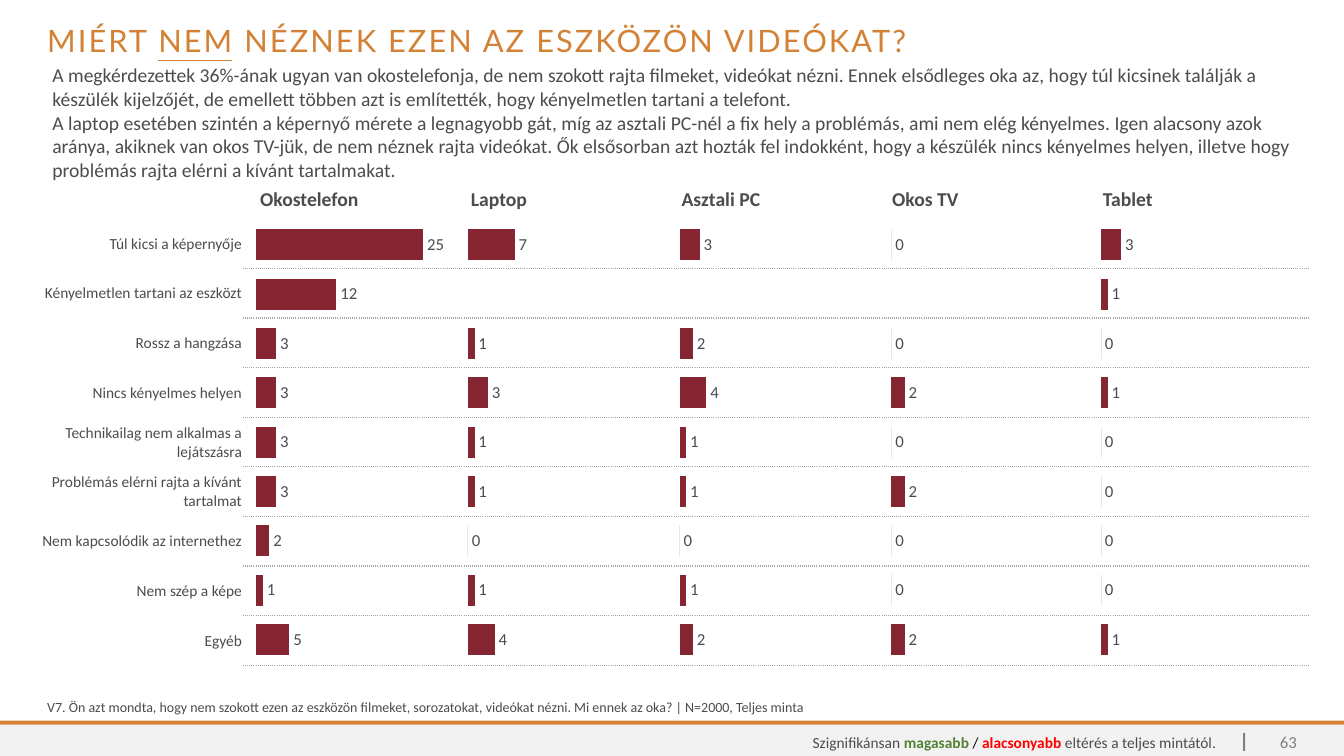
"""Builds the slide on why viewers do not watch videos on each device."""
from lxml import etree
from pptx import Presentation, util as u
from pptx.chart import data as chart_data
from pptx.dml import color
from pptx.enum import chart as charts, shapes, text
from pptx.oxml import ns

COLORS = {
    "orange": "D38235",
    "text": "4A4C4F",
    "bar": "862633",
    "footer": "F2F2F2",
    "gray": "808080",
    "dots": "A6A6A6",
    "higher": "548235",
    "lower": "FF0000",
    "black": "000000",
}
PLAIN_TABLE = "{2D5ABB26-0587-4C30-8999-92F81FD0307C}"
REASONS = [
    "Túl kicsi a képernyője",
    "Kényelmetlen tartani az eszközt",
    "Rossz a hangzása",
    "Nincs kényelmes helyen",
    "Technikailag nem alkalmas a lejátszásra",
    "Problémás elérni rajta a kívánt tartalmat",
    "Nem kapcsolódik az internethez",
    "Nem szép a képe",
    "Egyéb",
]
DEVICES = [
    ("Okostelefon", 2.54, [25, 12, 3, 3, 3, 3, 2, 1, 5]),
    ("Laptop", 4.64, [7, None, 1, 3, 1, 1, 0, 1, 4]),
    ("Asztali PC", 6.74, [3, None, 2, 4, 1, 1, 0, 1, 2]),
    ("Okos TV", 8.84, [0, None, 0, 2, 0, 2, 0, 0, 2]),
    ("Tablet", 10.92, [3, 1, 0, 1, 0, 0, 0, 0, 1]),
]
SUMMARY = [
    "A megkérdezettek 36%-ának ugyan van okostelefonja, de nem szokott rajta filmeket, "
    "videókat nézni. Ennek elsődleges oka az, hogy túl kicsinek találják a készülék "
    "kijelzőjét, de emellett többen azt is említették, hogy kényelmetlen tartani a telefont.",
    "A laptop esetében szintén a képernyő mérete a legnagyobb gát, míg az asztali PC-nél "
    "a fix hely a problémás, ami nem elég kényelmes. Igen alacsony azok aránya, akiknek van "
    "okos TV-jük, de nem néznek rajta videókat. Ők elsősorban azt hozták fel indokként, hogy "
    "a készülék nincs kényelmes helyen, illetve hogy problémás rajta elérni a kívánt tartalmakat.",
]
QUESTION = (
    "V7. Ön azt mondta, hogy nem szokott ezen az eszközön filmeket, sorozatokat, "
    "videókat nézni. Mi ennek az oka? | N=2000, Teljes minta"
)


def rgb(name):
    """Return the named colour."""
    return color.RGBColor.from_string(COLORS[name])


def set_font(font, size, name="text", face="Calibri", bold=None):
    """Style a font."""
    font.size, font.name, font.bold = u.Pt(size), face, bold
    font.color.rgb = rgb(name)


def add_rect(page, left, top, width, height, name):
    """Draw a flat rectangle."""
    rect = page.shapes.add_shape(
        shapes.MSO_SHAPE.RECTANGLE, *map(u.Inches, (left, top, width, height)))
    rect.shadow.inherit = False
    rect.fill.solid()
    rect.fill.fore_color.rgb = rgb(name)
    rect.line.fill.background()


def add_text(page, place, paragraphs, size, name="text", face="Calibri",
             align=text.PP_ALIGN.LEFT, anchor=text.MSO_ANCHOR.MIDDLE):
    """Add a wrapped text box; each paragraph is a list of run texts."""
    frame = page.shapes.add_textbox(*map(u.Inches, place)).text_frame
    frame.word_wrap = True
    frame.vertical_anchor = anchor
    for index, runs in enumerate(paragraphs):
        para = frame.add_paragraph() if index else frame.paragraphs[0]
        para.alignment = align
        set_font(para.font, size, name, face)
        for words in runs:
            para.add_run().text = words
    return frame


def add_title(page):
    """Add the spaced heading with one underlined word."""
    runs = ["MIÉRT ", "NEM", " NÉZNEK EZEN AZ ESZKÖZÖN VIDEÓKAT?"]
    frame = add_text(page, (0.37, 0.21, 12.6, 0.46), [runs], 22, "orange", "Lato",
                     anchor=text.MSO_ANCHOR.TOP)
    para = frame.paragraphs[0]
    para.line_spacing = 0.9
    for span in para.runs:
        span._r.get_or_add_rPr().set("spc", "150")
    para.runs[1].font.underline = True


def add_footer(page):
    """Add the footer band, the significance legend and the page number."""
    add_rect(page, 0, 7.19, 13.33, 0.31, "footer")
    add_rect(page, 0, 7.15, 13.33, 0.04, "orange")
    add_rect(page, 12.33, 7.27, 0.02, 0.18, "gray")
    right = text.PP_ALIGN.RIGHT
    add_text(page, (12.49, 7.27, 0.47, 0.18), [["63"]], 12, "gray", align=right)
    runs = ["Szignifikánsan ", "magasabb ", "/ ", "alacsonyabb ", "eltérés a teljes mintától."]
    frame = add_text(page, (4.54, 7.27, 7.62, 0.18), [runs], 11, align=right)
    spans = frame.paragraphs[0].runs
    for index, name in ((1, "higher"), (2, "black"), (3, "lower")):
        spans[index].font.color.rgb = rgb(name)
        spans[index].font.bold = name != "black"


def add_table(page, place, rows, widths):
    """Add an unstyled table with the given column widths."""
    table = page.shapes.add_table(rows, len(widths), *map(u.Inches, place)).table
    table.first_row = table.horz_banding = False
    table._tbl.tblPr[0].text = PLAIN_TABLE
    for column, width in zip(table.columns, widths):
        column.width = u.Inches(width)
    for cell in table.iter_cells():
        cell.fill.background()
    return table


def fill_cell(cell, words, size, side, bold=None, align=text.PP_ALIGN.LEFT):
    """Write one vertically centred cell."""
    cell.margin_left = cell.margin_right = u.Inches(side)
    cell.margin_top, cell.margin_bottom = u.Inches(0.01), 0
    cell.vertical_anchor = text.MSO_ANCHOR.MIDDLE
    para = cell.text_frame.paragraphs[0]
    para.text, para.alignment = words, align
    set_font(para.font, size, bold=bold)


def add_dotted_bottom(cell):
    """Give a cell a dotted lower border."""
    line = etree.Element(ns.qn("a:lnB"), w=str(u.Pt(1)))
    fill = etree.SubElement(line, ns.qn("a:solidFill"))
    etree.SubElement(fill, ns.qn("a:srgbClr"), val=COLORS["dots"])
    etree.SubElement(line, ns.qn("a:prstDash"), val="sysDot")
    cell._tc.get_or_add_tcPr().insert(0, line)


def add_reasons(page):
    """Add the reason labels with dotted rules beside them."""
    table = add_table(page, (-0.03, 2.17, 13.01, 4.43), len(REASONS), [2.44, 10.57])
    for index, reason in enumerate(REASONS):
        fill_cell(table.cell(index, 0), reason, 11, 0.01, align=text.PP_ALIGN.RIGHT)
        add_dotted_bottom(table.cell(index, 1))


def add_device_names(page):
    """Add the row of device names."""
    table = add_table(page, (2.54, 1.81, 10.43, 0.33), 1, [2.09] * len(DEVICES))
    for index, (device, _, _) in enumerate(DEVICES):
        fill_cell(table.cell(0, index), device, 14, 0.04, bold=True)


def set_plot_layout(chart):
    """Fix the inner plot area as fractions of the chart."""
    plot_area = chart._chartSpace.chart.plotArea
    for old in plot_area.findall(ns.qn("c:layout")):
        plot_area.remove(old)
    layout = etree.Element(ns.qn("c:layout"))
    manual = etree.SubElement(layout, ns.qn("c:manualLayout"))
    for tag, value in (("layoutTarget", "inner"), ("xMode", "edge"), ("yMode", "edge"),
                       ("x", "0"), ("y", "0.01"), ("w", "0.85"), ("h", "0.99")):
        etree.SubElement(manual, ns.qn("c:" + tag), val=value)
    plot_area.insert(0, layout)


def add_bars(page, device, left, values):
    """Add the bar chart of one device."""
    numbers = chart_data.CategoryChartData()
    numbers.categories = [str(index + 1) for index in range(len(REASONS))]
    numbers.add_series(device, values)
    chart = page.shapes.add_chart(
        charts.XL_CHART_TYPE.BAR_CLUSTERED,
        *map(u.Inches, (left, 2.14, 1.95, 4.45)), numbers).chart
    chart.has_legend = chart.has_title = False
    set_font(chart.font, 14)
    chart.category_axis.reverse_order = True
    chart.value_axis.minimum_scale, chart.value_axis.maximum_scale = 0, 25
    chart.value_axis.major_unit = 5
    chart.value_axis.has_major_gridlines = False
    chart.category_axis.visible = chart.value_axis.visible = False
    plot = chart.plots[0]
    plot.gap_width, plot.vary_by_categories = 60, False
    fill = plot.series[0].format.fill
    fill.solid()
    fill.fore_color.rgb = rgb("bar")
    plot.has_data_labels = True
    labels = plot.data_labels
    labels.show_value = True
    labels.number_format, labels.number_format_is_linked = "#,##0", False
    labels.position = charts.XL_LABEL_POSITION.OUTSIDE_END
    set_font(labels.font, 12)
    set_plot_layout(chart)


def main():
    """Build and save the deck."""
    deck = Presentation()
    deck.slide_width, deck.slide_height = u.Inches(13.33), u.Inches(7.5)
    page = deck.slides.add_slide(deck.slide_layouts[6])
    add_footer(page)
    add_reasons(page)
    add_device_names(page)
    for device, left, values in DEVICES:
        add_bars(page, device, left, values)
    add_text(page, (0.42, 0.58, 12.55, 1.1), [[words] for words in SUMMARY], 14,
             anchor=text.MSO_ANCHOR.TOP)
    add_title(page)
    add_text(page, (0.37, 6.88, 8.33, 0.27), [[QUESTION]], 10)
    deck.save("out.pptx")


if __name__ == "__main__":
    main()
